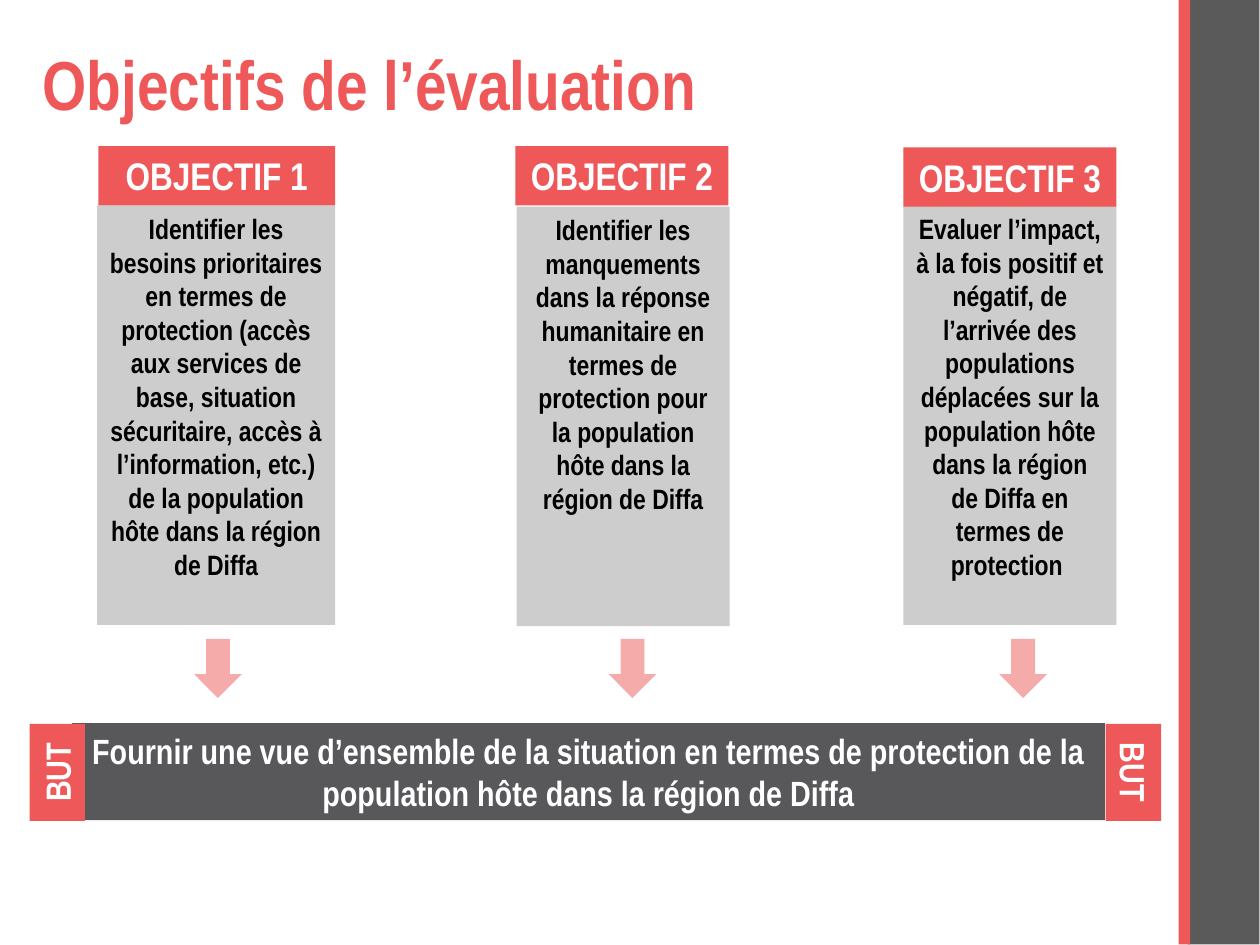
"""Build the slide presenting the three objectives and the goal of the assessment."""
from pptx import Presentation
from pptx.dml.color import RGBColor
from pptx.enum.shapes import MSO_SHAPE
from pptx.enum.text import MSO_ANCHOR, PP_ALIGN
from pptx.util import Inches, Pt

RECTANGLE = MSO_SHAPE.RECTANGLE
DOWN_ARROW = MSO_SHAPE.DOWN_ARROW
TOP = MSO_ANCHOR.TOP
MIDDLE = MSO_ANCHOR.MIDDLE
CENTER = PP_ALIGN.CENTER
LEFT = PP_ALIGN.LEFT

CORAL = "EE5859"
PINK = "F6ABAB"
LIGHT_GRAY = "CDCDCD"
DARK_GRAY = "58585A"
SIDE_GRAY = "5A5A5A"
WHITE = "FFFFFF"
BLACK = "000000"


def add_block(left, top, width, height, fill, kind=RECTANGLE, rotation=0):
    block = slide.shapes.add_shape(
        kind, Inches(left), Inches(top), Inches(width), Inches(height)
    )
    block.shadow.inherit = False
    block.fill.solid()
    block.fill.fore_color.rgb = RGBColor.from_string(fill)
    block.line.fill.background()
    block.rotation = rotation
    return block


def write(shape, text, size, color, align=CENTER, anchor=TOP):
    frame = shape.text_frame
    frame.word_wrap = True
    frame.vertical_anchor = anchor
    para = frame.paragraphs[0]
    para.text = text
    para.alignment = align
    para.font.name = "Arial Narrow"
    para.font.size = Pt(size)
    para.font.bold = True
    para.font.color.rgb = RGBColor.from_string(color)
    return para


deck = Presentation()
deck.slide_width = Inches(10)
deck.slide_height = Inches(7.5)
slide = deck.slides.add_slide(deck.slide_layouts[6])

add_block(5.96, 3.46, 7.5, 0.57, SIDE_GRAY, rotation=90)
add_block(5.65, 3.7, 7.5, 0.09, CORAL, rotation=90)

title = slide.shapes.add_textbox(Inches(0.24), Inches(0.33), Inches(8.69), Inches(0.74))
title_para = write(title, "Objectifs de l’évaluation", 39.6, CORAL, LEFT, MIDDLE)
title_para.line_spacing = 0.9

objectives = [
    (0.77, 1.63, 1.89, 0.78, 1.16, 1.88, 1.54,
     "Identifier les besoins prioritaires en termes de protection (accès aux "
     "services de base, situation sécuritaire, accès à l’information, etc.) "
     "de la population hôte dans la région de Diffa"),
    (4.1, 1.64, 1.69, 4.09, 1.16, 1.69, 4.83,
     "Identifier les manquements dans la réponse humanitaire en termes de "
     "protection pour la population hôte dans la région de Diffa"),
    (7.17, 1.63, 1.69, 7.17, 1.17, 1.69, 7.93,
     "Evaluer l’impact, à la fois positif et négatif, de l’arrivée des "
     "populations déplacées sur la population hôte dans la région de Diffa "
     "en termes de protection "),
]
for number, objective in enumerate(objectives, start=1):
    left, top, width, head_left, head_top, head_width, arrow_left, text = objective
    body = add_block(left, top, width, 3.33, LIGHT_GRAY)
    write(body, text, 16, BLACK)
    header = add_block(head_left, head_top, head_width, 0.47, CORAL)
    write(header, f"OBJECTIF {number}", 22, WHITE)
    add_block(arrow_left, 5.07, 0.38, 0.47, PINK, DOWN_ARROW)

goal = add_block(0.57, 5.74, 8.2, 0.77, DARK_GRAY)
write(
    goal,
    "Fournir une vue d’ensemble de la situation en termes de protection "
    "de la population hôte dans la région de Diffa",
    20,
    WHITE,
)
for left, rotation in [(0.07, 270), (8.61, 90)]:
    tab = add_block(left, 5.91, 0.77, 0.44, CORAL, rotation=rotation)
    write(tab, "BUT", 20, WHITE)

deck.save("out.pptx")
